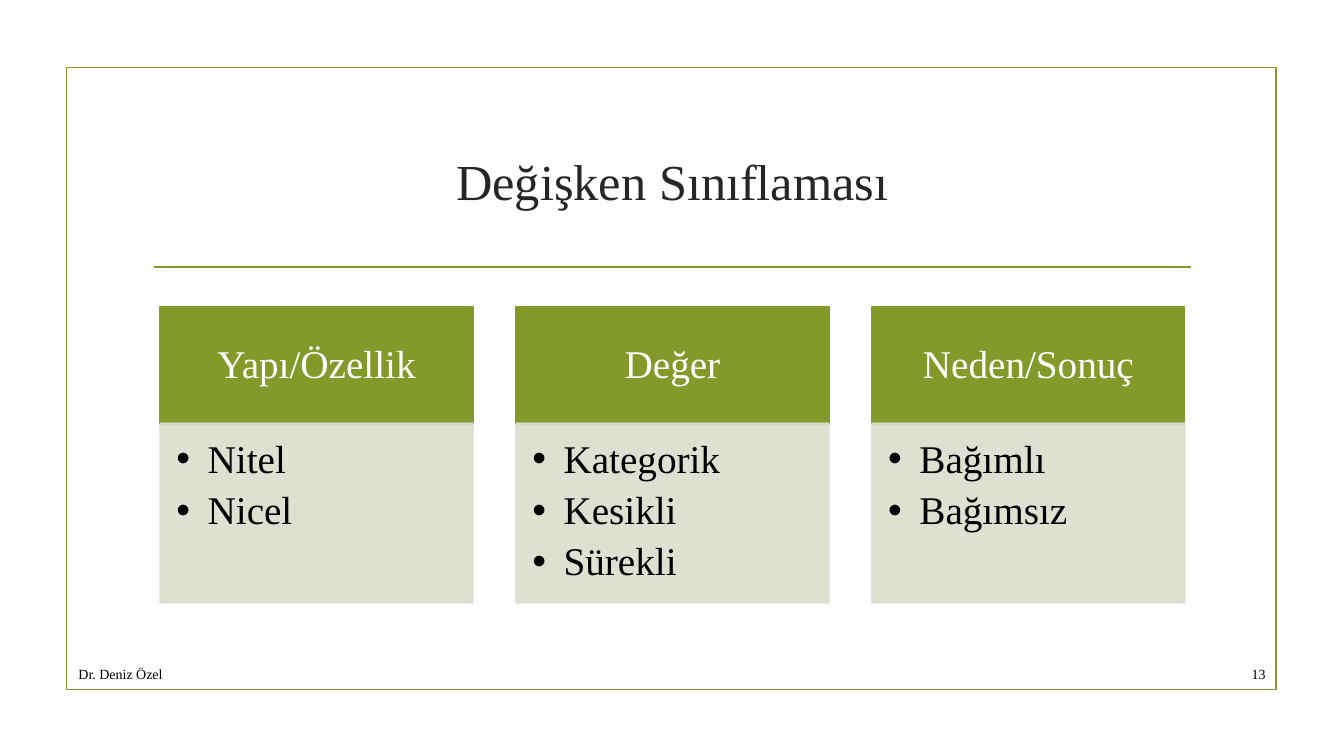
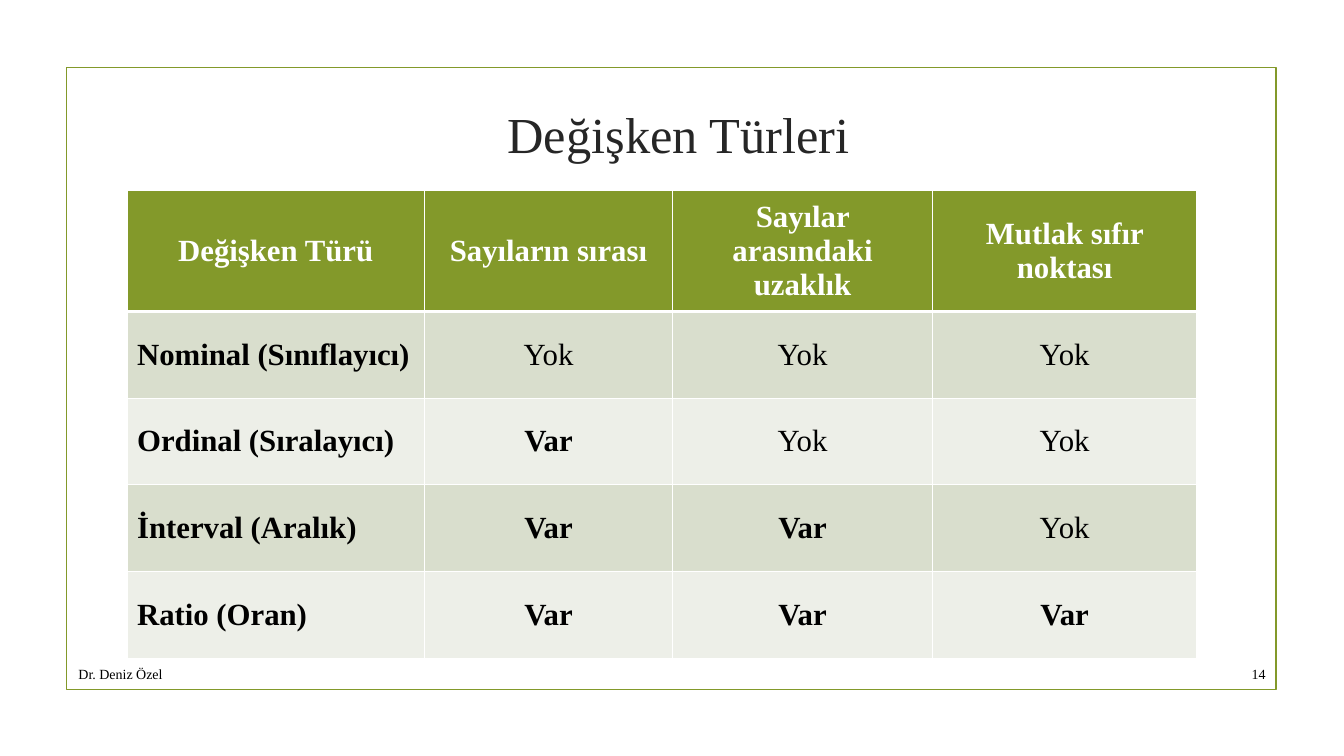
import pptx
import pptx.dml.color
import pptx.enum.shapes
import pptx.enum.text
import pptx.oxml
import pptx.oxml.ns
import pptx.util

Inches = pptx.util.Inches
Pt = pptx.util.Pt
RGBColor = pptx.dml.color.RGBColor
ALIGN = pptx.enum.text.PP_ALIGN
ANCHOR = pptx.enum.text.MSO_ANCHOR
RECTANGLE = pptx.enum.shapes.MSO_SHAPE.RECTANGLE
STRAIGHT = pptx.enum.shapes.MSO_CONNECTOR.STRAIGHT

FONT = "Times New Roman"
GREEN = RGBColor(0x83, 0x99, 0x2A)
SAGE = RGBColor(0xD9, 0xDE, 0xCD)
PALE = RGBColor(0xED, 0xEF, 0xE8)
CHARCOAL = RGBColor(0x26, 0x26, 0x26)
BLACK = RGBColor(0, 0, 0)
WHITE = RGBColor(255, 255, 255)

AUTHOR = "Dr. Deniz Özel"
GROUPS = [
    ("Yapı/Özellik", ["Nitel", "Nicel"]),
    ("Değer", ["Kategorik", "Kesikli", "Sürekli"]),
    ("Neden/Sonuç", ["Bağımlı", "Bağımsız"]),
]
VARIABLE_TYPES = [
    ["Değişken Türü", "Sayıların sırası", "Sayılar arasındaki uzaklık", "Mutlak sıfır noktası"],
    ["Nominal (Sınıflayıcı)", "Yok", "Yok", "Yok"],
    ["Ordinal (Sıralayıcı)", "Var", "Yok", "Yok"],
    ["İnterval (Aralık)", "Var", "Var", "Yok"],
    ["Ratio (Oran)", "Var", "Var", "Var"],
]


def add_xml(parent, tag, **attributes):
    """Append a DrawingML element and return it."""
    child = pptx.oxml.parse_xml(f"<a:{tag} {pptx.oxml.ns.nsdecls('a')}/>")
    for name, value in attributes.items():
        child.set(name, str(value))
    parent.append(child)
    return child


class SlideBuilder:
    """Holds the shared style and the slide being built."""

    def __init__(self, deck):
        self.deck = deck
        self.slide = None

    def start(self, title, number, left, top, height):
        """Begin a slide with its frame, title and footer."""
        self.slide = self.deck.slides.add_slide(self.deck.slide_layouts[5])
        self.rectangle(0.66, 0.67, 12, 6.17)
        box = self.slide.shapes.title
        box.left, box.top = Inches(left), Inches(top)
        box.width, box.height = Inches(10.5), Inches(height)
        self.set_text(box.text_frame, [title], 36, CHARCOAL, ALIGN.CENTER)
        self.footer(AUTHOR, 0.68, 7.99, ALIGN.LEFT)
        self.footer(str(number), 12.06, 0.59, ALIGN.RIGHT)

    def set_text(self, frame, lines, size, color, align, bold=False, anchor=ANCHOR.MIDDLE):
        frame.word_wrap = True
        frame.vertical_anchor = anchor
        frame.text = "\n".join(lines)
        for para in frame.paragraphs:
            para.alignment = align
            for span in para.runs:
                span.font.name = FONT
                span.font.size = Pt(size)
                span.font.bold = bold
                span.font.color.rgb = color

    def footer(self, text, left, width, align):
        box = self.slide.shapes.add_textbox(
            Inches(left), Inches(6.53), Inches(width), Inches(0.31))
        self.set_text(box.text_frame, [text], 10, BLACK, align)

    def rule(self, left, right, top):
        line = self.slide.shapes.add_connector(
            STRAIGHT, Inches(left), Inches(top), Inches(right), Inches(top))
        line.line.color.rgb = GREEN
        line.line.width = Pt(1.25)
        add_xml(line._element.spPr, "effectLst")

    def rectangle(self, left, top, width, height, fill=None):
        box = self.slide.shapes.add_shape(
            RECTANGLE, Inches(left), Inches(top), Inches(width), Inches(height))
        box.shadow.inherit = False
        box.line.color.rgb = fill or GREEN
        box.line.width = Pt(1.25)
        if fill is None:
            box.fill.background()
        else:
            box.fill.solid()
            box.fill.fore_color.rgb = fill
        return box

    def set_margins(self, frame, left, top, right, bottom):
        frame.margin_left, frame.margin_top = Inches(left), Inches(top)
        frame.margin_right, frame.margin_bottom = Inches(right), Inches(bottom)

    def card(self, heading, items, left):
        """A green heading above a translucent bulleted panel."""
        width = 3.1
        header = self.rectangle(left, 3.04, width, 1.17, GREEN)
        self.set_margins(header.text_frame, 0.22, 0.12, 0.22, 0.12)
        self.set_text(header.text_frame, [heading], 28, WHITE, ALIGN.CENTER)
        header.text_frame.paragraphs[0].line_spacing = 0.9

        panel = self.rectangle(left, 4.2, width, 1.78, SAGE)
        for color in list(panel._element.spPr.iter(pptx.oxml.ns.qn("a:srgbClr"))):
            add_xml(color, "alpha", val=90000)
        frame = panel.text_frame
        self.set_margins(frame, 0.16, 0.16, 0.22, 0.24)
        self.set_text(frame, items, 28, BLACK, ALIGN.LEFT, anchor=ANCHOR.TOP)
        for para in frame.paragraphs:
            para.line_spacing = 0.9
            para.space_after = Pt(6.4)
            properties = para._p.get_or_add_pPr()
            properties.set("marL", str(Inches(0.31)))
            properties.set("indent", str(-Inches(0.31)))
            add_xml(properties, "buFont", typeface="Arial")
            add_xml(properties, "buChar", char="•")

    def cell_borders(self, cell, top, bottom):
        properties = cell._tc.get_or_add_tcPr()
        for tag, points in (("lnL", 1), ("lnR", 1), ("lnT", top), ("lnB", bottom)):
            border = add_xml(properties, tag, w=Pt(points))
            add_xml(add_xml(border, "solidFill"), "srgbClr", val=WHITE)

    def table(self, rows, left, top, widths, heights):
        table = self.slide.shapes.add_table(
            len(rows), len(widths), Inches(left), Inches(top),
            Inches(sum(widths)), Inches(sum(heights))).table
        table.horz_banding = False
        for column, width in zip(table.columns, widths):
            column.width = Inches(width)
        for row, height in zip(table.rows, heights):
            row.height = Inches(height)
        for r, texts in enumerate(rows):
            for c, text in enumerate(texts):
                cell = table.cell(r, c)
                is_header = r == 0
                is_label = c == 0 and not is_header
                self.cell_borders(cell, 3 if r == 1 else 1, 3 if is_header else 1)
                cell.fill.solid()
                cell.fill.fore_color.rgb = GREEN if is_header else (PALE, SAGE)[r % 2]
                self.set_text(cell.text_frame, [text], 22,
                              WHITE if is_header else BLACK,
                              ALIGN.LEFT if is_label else ALIGN.CENTER,
                              bold=text != "Yok")
                cell.vertical_anchor = ANCHOR.MIDDLE


def main():
    deck = pptx.Presentation()
    deck.slide_width, deck.slide_height = Inches(13.33), Inches(7.5)
    builder = SlideBuilder(deck)

    # Classification cards
    builder.start("Değişken Sınıflaması", 13, left=1.42, top=1.07, height=1.43)
    builder.rule(1.53, 11.81, 2.65)
    for index, (heading, items) in enumerate(GROUPS):
        builder.card(heading, items, 1.59 + index * 3.53)

    # Variable types table
    builder.start("Değişken Türleri", 14, left=1.48, top=0.76, height=1.13)
    builder.table(VARIABLE_TYPES, 1.26, 1.89,
                  widths=[2.95, 2.46, 2.58, 2.62], heights=[1.06] + [0.86] * 4)

    deck.save("out.pptx")


if __name__ == "__main__":
    main()
